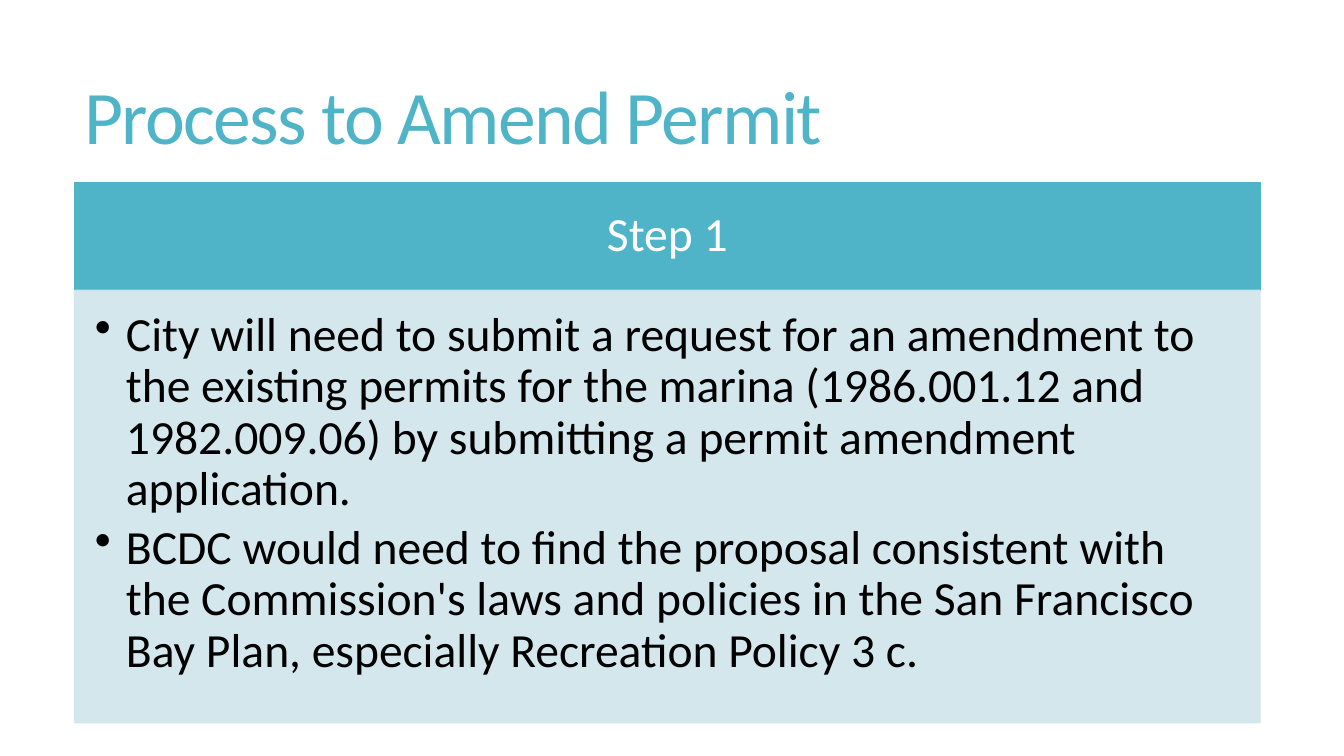
from dataclasses import dataclass

from lxml import etree
from pptx import Presentation
from pptx.dml.color import RGBColor
from pptx.enum.shapes import MSO_SHAPE
from pptx.enum.text import MSO_ANCHOR, PP_ALIGN
from pptx.oxml.ns import qn
from pptx.util import Inches, Pt

RECTANGLE = MSO_SHAPE.RECTANGLE
TOP, MIDDLE = MSO_ANCHOR.TOP, MSO_ANCHOR.MIDDLE
LEFT, CENTER = PP_ALIGN.LEFT, PP_ALIGN.CENTER
COLUMNS = ROWS = 100


@dataclass(frozen=True)
class Theme:
    font: str = "Calibri"
    accent: str = "50B4C8"
    panel: str = "D0E5EB"
    light: str = "FFFFFF"
    dark: str = "000000"
    title_size: float = 54
    body_size: float = 34
    title_tracking: float = -1.2
    panel_opacity: int = 90
    bullet_indent: float = 0.31


class SlideBuilder:
    def __init__(self, presentation, theme):
        self.theme = theme
        self.column = presentation.slide_width / COLUMNS
        self.row = presentation.slide_height / ROWS
        self.slide = presentation.slides.add_slide(presentation.slide_layouts[6])

    def place(self, left, top, width, height):
        return (round(left * self.column), round(top * self.row),
                round(width * self.column), round(height * self.row))

    def prepare_frame(self, shape, anchor, insets):
        frame = shape.text_frame
        frame.word_wrap = True
        frame.vertical_anchor = anchor
        (frame.margin_left, frame.margin_top,
         frame.margin_right, frame.margin_bottom) = map(Inches, insets)
        return frame

    def add_text(self, paragraph, text, size, color, align=LEFT, spacing=0.9):
        paragraph.alignment = align
        paragraph.line_spacing = spacing
        run = paragraph.add_run()
        run.text = text
        run.font.name = self.theme.font
        run.font.size = Pt(size)
        run.font.color.rgb = RGBColor.from_string(color)
        return run

    def add_title(self, area, text):
        shape = self.slide.shapes.add_textbox(*self.place(*area))
        frame = self.prepare_frame(shape, MIDDLE, (0.1, 0.05, 0.1, 0.05))
        run = self.add_text(frame.paragraphs[0], text, self.theme.title_size,
                            self.theme.accent, spacing=0.85)
        properties = run._r.get_or_add_rPr()
        properties.set("spc", str(round(self.theme.title_tracking * 100)))

    def add_panel(self, area, color, opacity=100):
        shape = self.slide.shapes.add_shape(RECTANGLE, *self.place(*area))
        shape.shadow.inherit = False
        shape.line.width = Pt(1)
        for fill in (shape.fill, shape.line.fill):
            fill.solid()
            fill.fore_color.rgb = RGBColor.from_string(color)
        if opacity < 100:
            for value in shape._element.spPr.iter(qn("a:srgbClr")):
                etree.SubElement(value, qn("a:alpha"), val=str(opacity * 1000))
        return shape

    def add_heading(self, area, text):
        shape = self.add_panel(area, self.theme.accent)
        frame = self.prepare_frame(shape, MIDDLE, (0.26, 0.15, 0.26, 0.15))
        self.add_text(frame.paragraphs[0], text, self.theme.body_size,
                      self.theme.light, CENTER)

    def add_bullets(self, area, items):
        shape = self.add_panel(area, self.theme.panel, self.theme.panel_opacity)
        frame = self.prepare_frame(shape, TOP, (0.2, 0.2, 0.26, 0.3))
        for index, item in enumerate(items):
            paragraph = frame.add_paragraph() if index else frame.paragraphs[0]
            self.add_text(paragraph, item, self.theme.body_size, self.theme.dark)
            paragraph.space_after = Pt(0.15 * self.theme.body_size)
            indent = Inches(self.theme.bullet_indent)
            properties = paragraph._p.get_or_add_pPr()
            properties.set("marL", str(indent))
            properties.set("indent", str(-indent))
            etree.SubElement(properties, qn("a:buChar"), char="•")


def main():
    presentation = Presentation()
    presentation.slide_width = Inches(13.33)
    presentation.slide_height = Inches(7.5)
    builder = SlideBuilder(presentation, Theme())

    left, width = 5.55, 88.2
    heading_top, heading_height = 24.13, 14.27
    builder.add_title((left, 7.33, width, 17.33), "Process to Amend Permit")
    builder.add_heading((left, heading_top, width, heading_height), "Step 1")
    builder.add_bullets((left, heading_top + heading_height, width, 57.2), [
        "City will need to submit a request for an amendment to the existing "
        "permits for the marina (1986.001.12 and 1982.009.06) by submitting "
        "a permit amendment application.",
        "BCDC would need to find the proposal consistent with the Commission's "
        "laws and policies in the San Francisco Bay Plan, especially "
        "Recreation Policy 3 c.",
    ])
    presentation.save("out.pptx")


if __name__ == "__main__":
    main()
